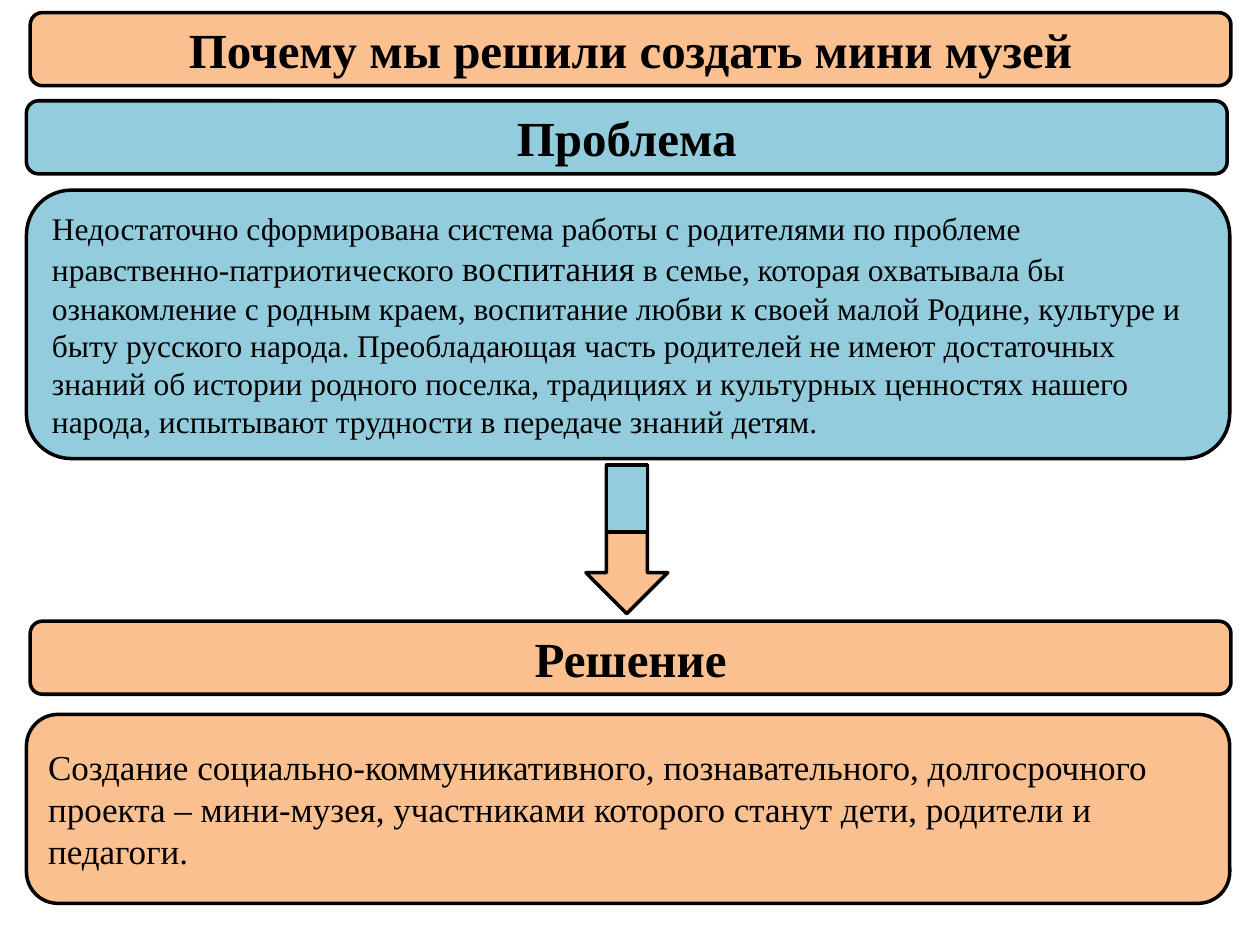
import pptx
import pptx.util
import pptx.dml.color
import pptx.enum.shapes
import pptx.enum.text

Inches = pptx.util.Inches
Pt = pptx.util.Pt
RGB = pptx.dml.color.RGBColor.from_string
KIND = pptx.enum.shapes.MSO_SHAPE
ALIGN = pptx.enum.text.PP_ALIGN
HUES = {"ink": "000000", "blue": "93CDDD", "peach": "FAC090"}
FONT = "Times New Roman"
TITLE = "Почему мы решили создать мини музей"
ISSUE = [
    ("Недостаточно сформирована система работы с родителями по проблеме "
     "нравственно-патриотического ", 18),
    ("воспитания", 20),
    (" в семье, которая охватывала бы ознакомление с родным краем, "
     "воспитание любви к своей малой Родине, культуре и быту русского народа. "
     "Преобладающая часть родителей не имеют достаточных знаний об истории "
     "родного поселка, традициях и культурных ценностях нашего народа, "
     "испытывают трудности в передаче знаний детям.", 18),
]
ANSWER = [
    ("Создание социально-коммуникативного, познавательного, долгосрочного "
     "проекта – мини-музея, участниками которого станут дети, родители и "
     "педагоги.", 20),
]


def add_box(slide, kind, box, hue):
    """Add an outlined shape filled with the named colour."""
    shape = slide.shapes.add_shape(kind, *map(Inches, box))
    shape.shadow.inherit = False
    shape.fill.solid()
    shape.fill.fore_color.rgb = RGB(HUES[hue])
    shape.line.color.rgb = RGB(HUES["ink"])
    shape.line.width = Pt(2)
    return shape


def add_panel(slide, box, hue, runs, align=ALIGN.LEFT, bold=False):
    """Add a rounded panel holding one paragraph of sized runs."""
    frame = add_box(slide, KIND.ROUNDED_RECTANGLE, box, hue).text_frame
    frame.word_wrap = True
    frame.vertical_anchor = pptx.enum.text.MSO_ANCHOR.MIDDLE
    para = frame.paragraphs[0]
    para.alignment = align
    para.font.name = FONT
    para.font.bold = bold
    para.font.color.rgb = RGB(HUES["ink"])
    if len(runs) == 1:
        para.font.size = Pt(runs[0][1])
    for text, size in runs:
        run = para.add_run()
        run.text = text
        if len(runs) > 1:
            run.font.size = Pt(size)


def add_banner(slide, left, top, hue, text):
    """Add a full-width heading bar."""
    add_panel(slide, (left, top, 9.53, 0.58), hue, [(text, 28)],
              ALIGN.CENTER, True)


def add_arrow(slide, box):
    """Add a down arrow whose upper shaft has the problem colour."""
    left, top, width, height = box
    add_box(slide, KIND.DOWN_ARROW, box, "peach")
    shaft = (left + width / 4, top, width / 2, height * 0.45)
    add_box(slide, KIND.RECTANGLE, shaft, "blue")


def main():
    """Build and save the slide."""
    deck = pptx.Presentation()
    deck.slide_width, deck.slide_height = Inches(10), Inches(7.5)
    slide = deck.slides.add_slide(deck.slide_layouts[6])
    add_banner(slide, 0.24, 0.1, "peach", TITLE)
    add_banner(slide, 0.21, 0.8, "blue", "Проблема")
    add_panel(slide, (0.21, 1.51, 9.55, 2.13), "blue", ISSUE)
    add_arrow(slide, (4.65, 3.69, 0.65, 1.18))
    add_banner(slide, 0.24, 4.93, "peach", "Решение")
    add_panel(slide, (0.21, 5.67, 9.55, 1.5), "peach", ANSWER)
    deck.save("out.pptx")


if __name__ == "__main__":
    main()
